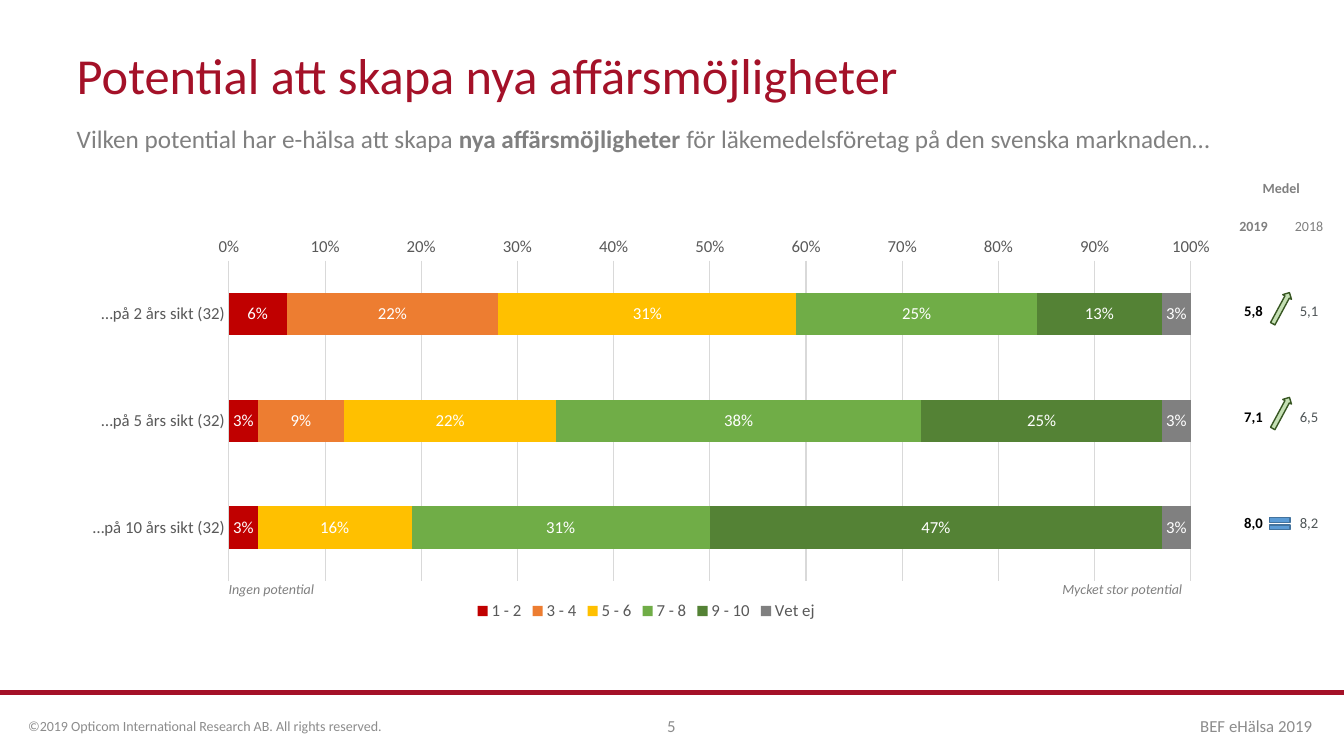
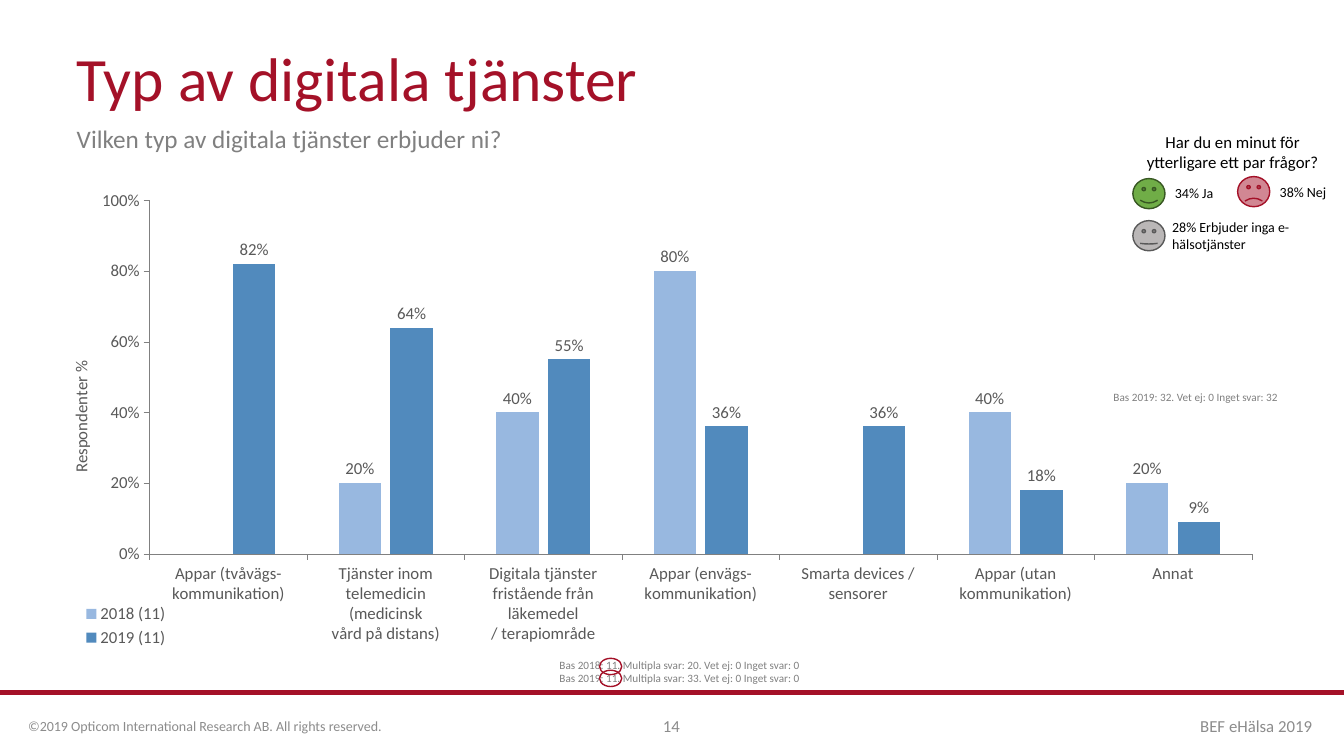
from pptx import Presentation, util as u
from pptx.chart.data import CategoryChartData
from pptx.dml.color import RGBColor
from pptx.enum import chart as ch, shapes as sh, text as tx
from pptx.oxml import parse_xml
from pptx.oxml.ns import nsdecls, qn
from pptx.oxml.xmlchemy import OxmlElement

HUES = {
    "red": "A41128", "foot": "8C8C8C", "gray": "808080", "text": "595959",
    "black": "000000", "white": "FFFFFF", "grid": "D9D9D9", "past": "4F5557",
    "low": "C00000", "orange": "ED7D31", "gold": "FFC000", "green": "70AD47",
    "forest": "548235", "pale": "98B8E0", "blue": "518ABD", "equal": "5B9BD5",
    "navy": "43739E", "mint": "C5E0B4", "pine": "385723", "stone": "767171",
}
HUE = {name: RGBColor.from_string(code) for name, code in HUES.items()}
FONT = "Calibri"
LEFT, MID, RIGHT = tx.PP_ALIGN.LEFT, tx.PP_ALIGN.CENTER, tx.PP_ALIGN.RIGHT


def write(pool, box, words, size, hue, align=LEFT, slant=False, anchor=tx.MSO_ANCHOR.TOP):
    frame = pool.add_textbox(*map(u.Cm, box)).text_frame
    frame.word_wrap = True
    frame.vertical_anchor = anchor
    frame.text = words
    for para in frame.paragraphs:
        para.alignment = align
        font = para.runs[0].font
        font.name, font.size, font.italic = FONT, u.Pt(size), slant
        font.color.rgb = HUE[hue]


def draw(pool, kind, box, fill, edge, alpha=None):
    shape = pool.add_shape(kind, *map(u.Cm, box))
    shape.shadow.inherit = False
    if fill:
        shape.fill.solid()
        shape.fill.fore_color.rgb = HUE[fill]
    else:
        shape.fill.background()
    if alpha:
        tint = OxmlElement("a:alpha")
        tint.set("val", str(alpha * 1000))
        shape.element.find(".//" + qn("a:srgbClr")).append(tint)
    shape.line.color.rgb = HUE[edge]
    shape.line.width = u.Pt(1)
    return shape


PAGES = [
    {
        "title": "Potential att skapa nya affärsmöjligheter", "size": 36, "space": 0.7,
        "lead": [("Vilken potential har e-hälsa att skapa ", False),
                 ("nya affärsmöjligheter ", True),
                 ("för läkemedelsföretag på den svenska marknaden…", False)],
        "page": "5",
        "kind": ch.XL_CHART_TYPE.BAR_STACKED_100,
        "box": (1.68, 5.77, 29.21, 9.98),
        "cats": ["…på 2 års sikt (32)", "…på 5 års sikt (32)", "…på 10 års sikt (32)"],
        "rows": [("1 - 2", "low", (0.06, 0.03, 0.03)),
                 ("3 - 4", "orange", (0.22, 0.09, None)),
                 ("5 - 6", "gold", (0.31, 0.22, 0.16)),
                 ("7 - 8", "green", (0.25, 0.38, 0.31)),
                 ("9 - 10", "forest", (0.13, 0.25, 0.47)),
                 ("Vet ej", "gray", (0.03, 0.03, 0.03))],
        "overlap": 100, "label": "white", "unit": 0.1,
        "spots": {"c:plotArea": (0.14, 0.08, 0.83, 0.81)},
    },
    {
        "title": "Typ av digitala tjänster", "size": 44, "space": 0.9,
        "lead": [("Vilken typ av digitala tjänster erbjuder ni?", False)],
        "page": "14",
        "kind": ch.XL_CHART_TYPE.COLUMN_CLUSTERED,
        "box": (1.68, 4.8, 29.87, 11.73),
        "cats": ["Appar (tvåvägs-\nkommunikation)",
                 "Tjänster inom\ntelemedicin (medicinsk\nvård på distans)",
                 "Digitala tjänster\nfristående från\nläkemedel\n/ terapiområde",
                 "Appar (envägs-\nkommunikation)", "Smarta devices / sensorer",
                 "Appar (utan kommunikation)", "Annat"],
        "rows": [("2018 (11)", "pale", (None, 0.2, 0.4, 0.8, None, 0.4, 0.2)),
                 ("2019 (11)", "blue", (0.82, 0.64, 0.55, 0.36, 0.36, 0.18, 0.09))],
        "overlap": -22, "label": "text", "unit": 0.2,
        "spots": {"c:plotArea": (0.07, 0.02, 0.93, 0.76), "c:legend": (0.01, 0.88, 0.08, 0.11)},
    },
]
FEET = [
    (0.46, 9.5, "©2019 Opticom International Research AB. All rights reserved.", 10, LEFT),
    (21.89, 11.43, "BEF eHälsa 2019", 12, RIGHT),
]

deck = Presentation()
deck.slide_width, deck.slide_height = u.Cm(33.87), u.Cm(19.05)
slides, charts = [], []

for page in PAGES:
    slide = deck.slides.add_slide(deck.slide_layouts[1])
    pool = slide.shapes
    slides.append(slide)

    rule = pool.add_connector(sh.MSO_CONNECTOR.STRAIGHT, 0, u.Cm(17.45), deck.slide_width, u.Cm(17.45))
    rule.line.color.rgb = HUE["red"]
    rule.line.width = u.Pt(3)
    rule.element.find(qn("p:spPr")).append(OxmlElement("a:effectLst"))

    heads = [
        (pool.title, 1.02, 2.06, [(page["title"], False)], page["size"], "red", page["space"], tx.MSO_ANCHOR.MIDDLE),
        (slide.placeholders[1], 3.07, 1.17, page["lead"], 18, "gray", 0.9, tx.MSO_ANCHOR.TOP),
    ]
    for hold, top, high, parts, size, hue, space, anchor in heads:
        hold.left, hold.top, hold.width, hold.height = map(u.Cm, (1.68, top, 29.21, high))
        frame = hold.text_frame
        frame.auto_size = tx.MSO_AUTO_SIZE.NONE
        frame.vertical_anchor = anchor
        para = frame.paragraphs[0]
        props = para._p.get_or_add_pPr()
        props.set("marL", "0")
        props.set("indent", "0")
        props.append(OxmlElement("a:buNone"))
        para.alignment, para.line_spacing, para.space_before = LEFT, space, u.Pt(0)
        for words, bold in parts:
            run = para.add_run()
            run.text = words
            run.font.name, run.font.size, run.font.bold = FONT, u.Pt(size), bold
            run.font.color.rgb = HUE[hue]

    for left, wide, words, size, align in FEET + [(13.11, 7.62, page["page"], 12, MID)]:
        write(pool, (left, 17.78, wide, 1.02), words, size, "foot", align, anchor=tx.MSO_ANCHOR.MIDDLE)

    data = CategoryChartData(number_format="0%")
    data.categories = page["cats"]
    for name, hue, vals in page["rows"]:
        data.add_series(name, vals)
    chart = pool.add_chart(page["kind"], *map(u.Cm, page["box"]), data).chart
    charts.append(chart)
    chart.has_title = False
    chart.font.name, chart.font.size = FONT, u.Pt(12)
    chart.font.color.rgb = HUE["text"]
    chart.has_legend = True
    chart.legend.include_in_layout = False
    plot = chart.plots[0]
    plot.gap_width, plot.overlap = 150, page["overlap"]
    plot.vary_by_categories = False
    for series, (name, hue, vals) in zip(plot.series, page["rows"]):
        series.format.fill.solid()
        series.format.fill.fore_color.rgb = HUE[hue]
        series.invert_if_negative = False
        tags = series.data_labels
        tags.show_value = True
        tags.number_format, tags.number_format_is_linked = "0%", False
        tags.font.name, tags.font.size = FONT, u.Pt(12)
        tags.font.color.rgb = HUE[page["label"]]
    scale = chart.value_axis
    scale.minimum_scale, scale.maximum_scale, scale.major_unit = 0, 1, page["unit"]
    scale.tick_labels.number_format = "0%"
    scale.tick_labels.number_format_is_linked = False

    for tag, spot in page["spots"].items():
        part = chart.element.find(".//" + qn(tag))
        for old in part.findall(qn("c:layout")):
            part.remove(old)
        inner = '<c:layoutTarget val="inner"/>' if tag == "c:plotArea" else ""
        modes = '<c:xMode val="edge"/><c:yMode val="edge"/>'
        sizes = "".join(f'<c:{key} val="{val}"/>' for key, val in zip("xywh", spot))
        layout = parse_xml(
            f'<c:layout {nsdecls("c")}><c:manualLayout>{inner}{modes}{sizes}</c:manualLayout></c:layout>')
        part.insert(0 if inner else 1, layout)

bars, cols = charts
bars.legend.position = ch.XL_LEGEND_POSITION.BOTTOM
bars.category_axis.reverse_order = True
bars.category_axis.format.line.color.rgb = HUE["grid"]
bars.value_axis.format.line.fill.background()
bars.value_axis.has_major_gridlines = True
bars.value_axis.major_gridlines.format.line.color.rgb = HUE["grid"]
bars.value_axis.major_gridlines.format.line.width = u.Pt(0.75)
cols.value_axis.has_major_gridlines = False
for axis in (bars.category_axis, bars.value_axis):
    axis.major_tick_mark = ch.XL_TICK_MARK.NONE
for axis in (cols.category_axis, cols.value_axis):
    axis.major_tick_mark = ch.XL_TICK_MARK.OUTSIDE
    axis.format.line.color.rgb = HUE["gray"]
    axis.format.line.width = u.Pt(0.19)
name = cols.value_axis.axis_title.text_frame
name.text = "Respondenter %"
font = name.paragraphs[0].runs[0].font
font.name, font.size, font.bold = FONT, u.Pt(12), False
font.color.rgb = HUE["text"]
turn = cols.element.find(".//" + qn("c:valAx") + "/" + qn("c:title") + "//" + qn("a:bodyPr"))
turn.set("rot", "-5400000")
turn.set("vert", "horz")

pool = slides[0].shapes
MEANS = [("Medel", ""), ("2019", "2018"), ("5,8", "5,1"), ("7,1", "6,5"), ("8,0", "8,2")]
grid = pool.add_table(5, 2, *map(u.Cm, (30.89, 4.32, 2.8, 9.96))).table
grid.first_row = grid.horz_banding = False
for col in grid.columns:
    col.width = u.Cm(1.4)
for row, high in zip(grid.rows, (0.86, 1.09, 2.67, 2.67, 2.67)):
    row.height = u.Cm(high)
grid.cell(0, 0).merge(grid.cell(0, 1))
for r, pair in enumerate(MEANS):
    for c, words in enumerate(pair):
        cell = grid.cell(r, c)
        cell.fill.background()
        cell.vertical_anchor = tx.MSO_ANCHOR.MIDDLE
        cell.margin_left = cell.margin_right = u.Cm(0.03)
        if r > 1:
            cell.margin_top, cell.margin_bottom = u.Cm(0.5), u.Cm(0)
        if words:
            cell.text = words
            para = cell.text_frame.paragraphs[0]
            para.alignment = MID
            font = para.runs[0].font
            font.name, font.size, font.bold = FONT, u.Pt(10.5 if r > 1 else 10), c == 0
            font.color.rgb = HUE["gray" if r < 2 else ("black", "past")[c]]

for left, words, align in [(5.51, "Ingen potential", LEFT), (24.43, "Mycket stor potential", RIGHT)]:
    write(pool, (left, 14.5, 5.61, 0.69), words, 10, "gray", align, True)
draw(pool, sh.MSO_SHAPE.MATH_EQUAL, (31.9, 12.93, 0.71, 0.53), "equal", "navy")
for top in (7.32, 9.96):
    draw(pool, sh.MSO_SHAPE.DOWN_ARROW, (32.16, top, 0.25, 0.89), "mint", "pine").rotation = 208.3

pool = slides[1].shapes
base = ("Bas 2018: 11. Multipla svar: 20. Vet ej: 0 Inget svar: 0\n"
        "Bas 2019: 11. Multipla svar: 33. Vet ej: 0 Inget svar: 0")
write(pool, (11.63, 16.46, 11, 0.94), base, 8, "gray", MID)
write(pool, (27.66, 9.7, 4.95, 0.61), "Bas 2019: 32. Vet ej: 0 Inget svar: 32", 8, "gray", MID)
for top in (16.59, 16.89):
    draw(pool, sh.MSO_SHAPE.OVAL, (15.11, top, 0.56, 0.41), None, "red")

poll = pool.add_group_shape().shapes
FACES = [
    (28.55, 4.5, 0.047, "green", "pine", None, (29.36, 4.52, 1.52, 0.69), "34% Ja"),
    (31.19, 4.45, -0.047, "red", "red", 50, (32, 4.5, 1.85, 0.69), "38% Nej"),
    (28.55, 5.56, 0.01, "stone", "text", 50, (29.29, 5.38, 4.57, 1.12), "28% Erbjuder inga e-hälsotjänster"),
]
for left, top, smile, fill, edge, alpha, box, words in FACES:
    face = draw(poll, sh.MSO_SHAPE.SMILEY_FACE, (left, top, 0.81, 0.76), fill, edge, alpha)
    face.adjustments[0] = smile
    write(poll, box, words, 10, "black")
write(poll, (28.27, 3.2, 5.59, 1.27), "Har du en minut för ytterligare ett par frågor?", 12, "black", MID)

deck.save("out.pptx")
